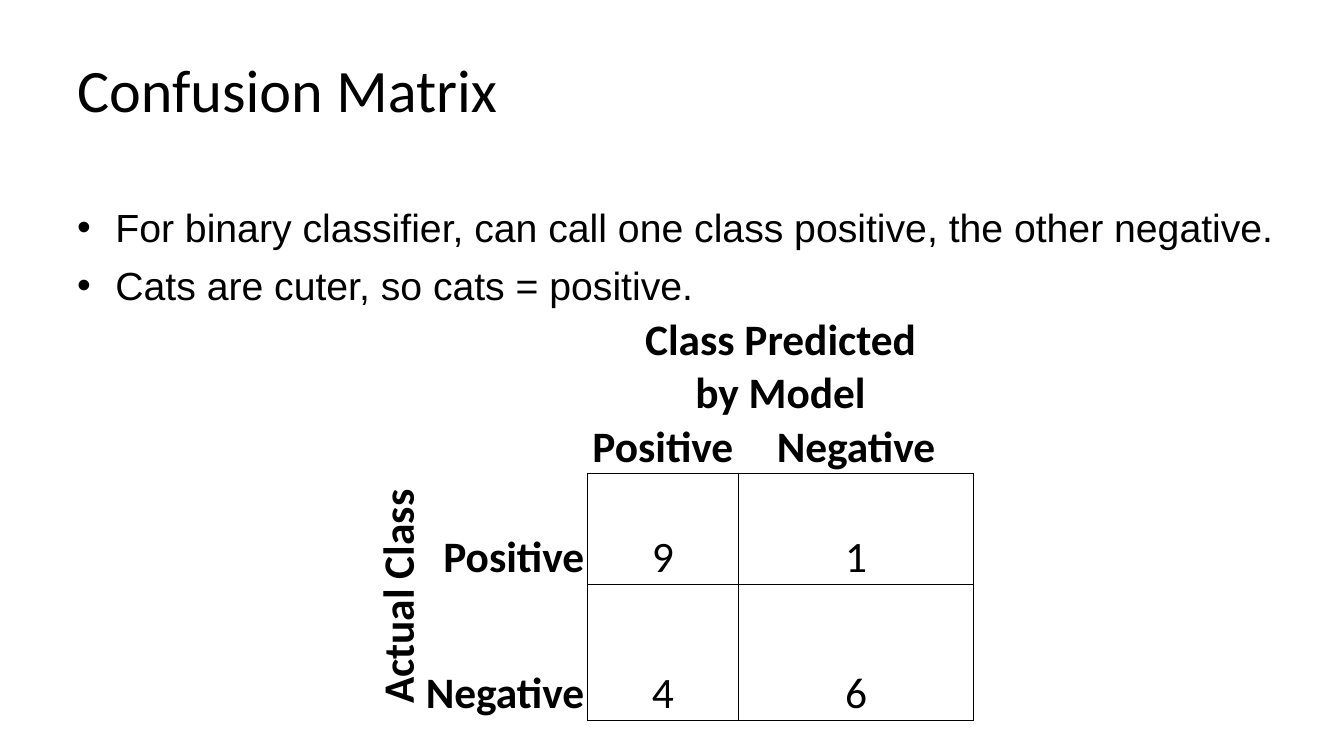
"""Build the confusion matrix slide."""
from dataclasses import dataclass

from lxml.etree import SubElement
from pptx import Presentation
from pptx.dml.color import RGBColor
from pptx.enum.text import MSO_ANCHOR, PP_ALIGN
from pptx.oxml import parse_xml
from pptx.oxml.ns import nsdecls, qn
from pptx.util import Inches, Pt

COLORS = {"text": "000000", "line": "000000"}
GRID = 12
PLAIN = "{2D5ABB26-0587-4C30-8999-92F81FD0307C}"


@dataclass(frozen=True)
class Box:
    """Place of an object in grid columns and rows."""
    col: float
    row: float
    wide: float
    high: float


@dataclass(frozen=True)
class Entry:
    """One filled cell of the matrix."""
    row: int
    col: int
    text: str
    align: PP_ALIGN = PP_ALIGN.CENTER
    bold: bool = True
    edges: str = ""
    down: int = 1
    over: int = 1
    turn: bool = False


TITLE = Box(8, 3, 149, 15)
BODY = Box(8, 23.3, 150.4, 58.6)
MATRIX = Box(44, 37, 72, 48.7)
COLS = (5.64, 20.28, 18, 28)
ROWS = (5.9, 5.9, 13.2, 16.2)
POINTS = (
    "For binary classifier, can call one class positive, the other negative.",
    "Cats are cuter, so cats = positive.",
)
LABELS = ("Positive", "Negative")
COUNTS = (("9", "1"), ("4", "6"))
ENTRIES = [
    Entry(0, 2, "Class Predicted\vby Model", over=2),
    Entry(2, 0, "Actual Class", down=2, turn=True),
    *(Entry(1, 2 + i, name, edges="B") for i, name in enumerate(LABELS)),
    *(Entry(2 + i, 1, name, PP_ALIGN.RIGHT, edges="R")
      for i, name in enumerate(LABELS)),
    *(Entry(2 + i, 2 + j, count, bold=False, edges="LRTB")
      for i, line in enumerate(COUNTS) for j, count in enumerate(line)),
]


def span(units: float) -> int:
    """Turn grid units into a length."""
    return Inches(units / GRID)


def place(box: Box) -> tuple:
    """Give left, top, width and height of a box."""
    return tuple(map(span, (box.col, box.row, box.wide, box.high)))


def style(para, face: str, size: float, bold: bool = False) -> None:
    """Format every run and break of a paragraph."""
    for font in (para.font, *(run.font for run in para.runs)):
        font.name, font.size, font.bold = face, Pt(size), bold
        font.color.rgb = RGBColor.from_string(COLORS["text"])


def add_text(slide, box: Box, text: str, anchor: MSO_ANCHOR):
    """Add a wrapped text box and return its frame."""
    frame = slide.shapes.add_textbox(*place(box)).text_frame
    frame.word_wrap = True
    frame.vertical_anchor = anchor
    frame.text = text
    return frame


def add_points(slide) -> None:
    """Add the bulleted list."""
    frame = add_text(slide, BODY, "\n".join(POINTS), MSO_ANCHOR.TOP)
    for i, para in enumerate(frame.paragraphs):
        props = para._p.get_or_add_pPr()
        props.set("marL", str(Inches(0.38)))
        props.set("indent", str(-Inches(0.38)))
        para.line_spacing = 1.05
        para.space_before = Pt(4.8 if i else 0)
        para.space_after = Pt(1.6)
        SubElement(props, qn("a:buFont")).set("typeface", "Arial")
        SubElement(props, qn("a:buChar")).set("char", "•")
        style(para, "Arial", 28)


def add_edges(cell, edges: str) -> None:
    """Draw the named borders of a cell."""
    props = cell._tc.get_or_add_tcPr()
    for i, edge in enumerate(edges):
        props.insert(i, parse_xml(
            f'<a:ln{edge} {nsdecls("a")} w="{Pt(0.5)}"><a:solidFill>'
            f'<a:srgbClr val="{COLORS["line"]}"/></a:solidFill></a:ln{edge}>'))


def fill_cell(table, entry: Entry) -> None:
    """Write and format one entry."""
    cell = table.cell(entry.row, entry.col)
    if entry.down * entry.over > 1:
        cell.merge(table.cell(entry.row + entry.down - 1,
                              entry.col + entry.over - 1))
    cell.vertical_anchor = MSO_ANCHOR.BOTTOM
    cell.margin_left = cell.margin_right = cell.margin_top = Inches(0.03)
    cell.margin_bottom = 0
    if entry.turn:
        cell._tc.get_or_add_tcPr().set("vert", "vert270")
    para = cell.text_frame.paragraphs[0]
    para.text = entry.text
    para.alignment = entry.align
    style(para, "Calibri", 31, entry.bold)
    add_edges(cell, entry.edges)


def add_matrix(slide) -> None:
    """Add the confusion matrix table."""
    table = slide.shapes.add_table(len(ROWS), len(COLS), *place(MATRIX)).table
    table.first_row = table.horz_banding = False
    table._tbl.tblPr.find(qn("a:tableStyleId")).text = PLAIN
    for col, wide in zip(table.columns, COLS):
        col.width = span(wide)
    for row, high in zip(table.rows, ROWS):
        row.height = span(high)
    for cell in table.iter_cells():
        cell.fill.background()
    for entry in ENTRIES:
        fill_cell(table, entry)


def main() -> None:
    """Build and save the slide."""
    deck = Presentation()
    deck.slide_width, deck.slide_height = span(160), span(90)
    slide = deck.slides.add_slide(deck.slide_layouts[6])
    title = add_text(slide, TITLE, "Confusion Matrix", MSO_ANCHOR.MIDDLE)
    style(title.paragraphs[0], "Calibri", 43)
    add_points(slide)
    add_matrix(slide)
    deck.save("out.pptx")


if __name__ == "__main__":
    main()
